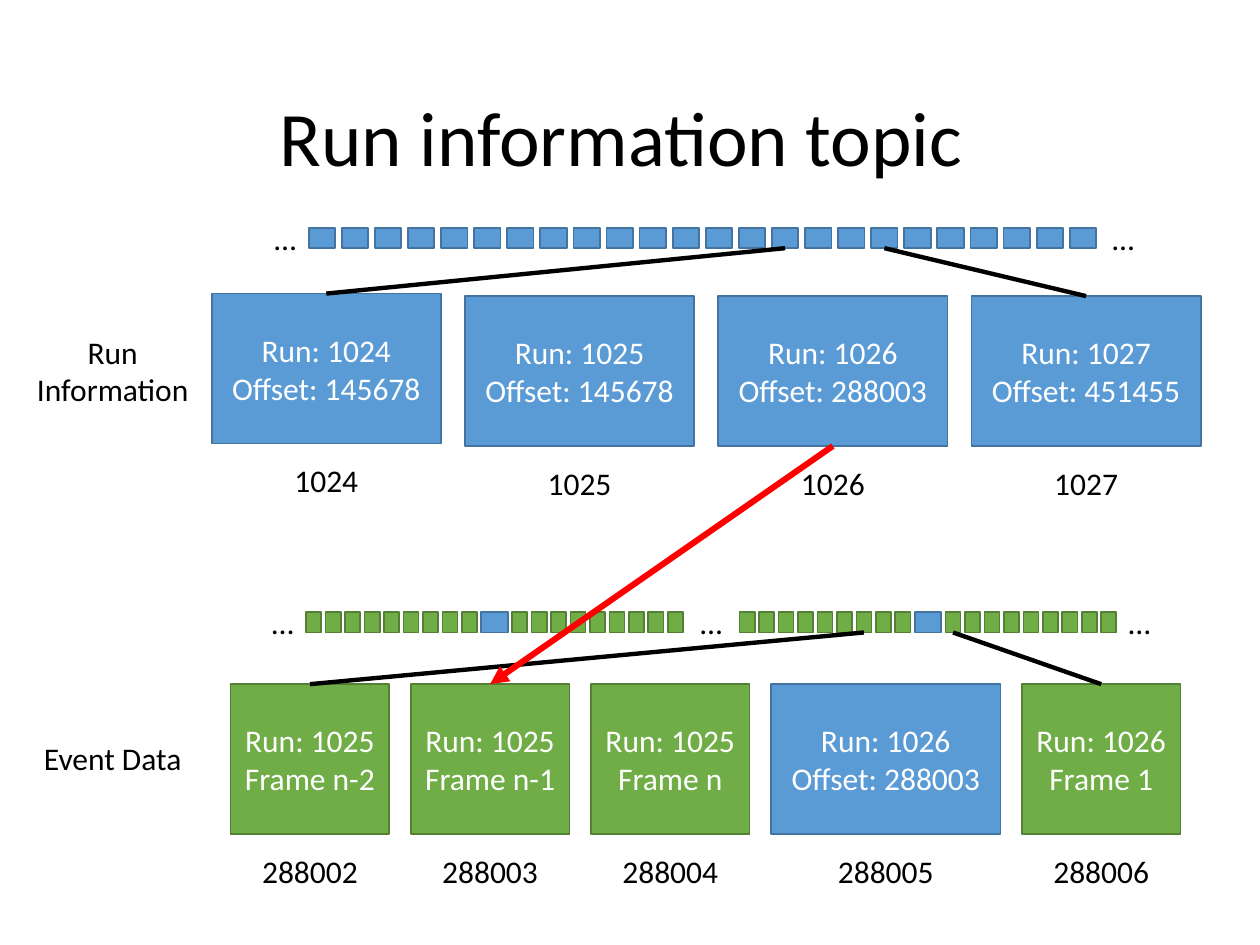
import pptx
import pptx.dml.color
import pptx.enum.shapes
import pptx.enum.text
import pptx.oxml
import pptx.oxml.ns
import pptx.util

COLORS = {"run": "5B9BD5", "run_line": "43739E", "event": "70AD47", "event_line": "538035",
          "text": "000000", "light": "FFFFFF", "arrow": "FF0000"}
COLUMNS, ROWS = 100, 75
CARD_WIDTHS = {"run": 18.2, "event": 12.6}
TICK_WIDTHS = {"run": 2.1, "event": 1.2}
CARD_HEIGHT, TICK_HEIGHT, LABEL_HEIGHT = 11.9, 1.6, 4
CAPTION_WIDTH, CAPTION_DROP = 10.1, 12.8
ELLIPSIS_WIDTH = 3.8
TOP, BOTTOM = 0, 2

presentation = pptx.Presentation()
presentation.slide_width = pptx.util.Inches(10)
presentation.slide_height = pptx.util.Inches(7.5)


def grid(left, top, width, height):
    """Turn a box in columns and rows into slide lengths."""
    column = presentation.slide_width / COLUMNS
    row = presentation.slide_height / ROWS
    return [round(value) for value in (left * column, top * row, width * column, height * row)]


def color(name):
    """Return the named colour."""
    return pptx.dml.color.RGBColor.from_string(COLORS[name])


def set_format(target, values):
    """Set every attribute in the dict of format values."""
    for name, value in values.items():
        setattr(target, name, value)


def write(text_frame, lines, name="text", size=18, **paragraph_format):
    """Write one paragraph for each line in a text frame."""
    for index, line in enumerate(lines):
        paragraph = text_frame.paragraphs[0] if index == 0 else text_frame.add_paragraph()
        set_format(paragraph, {"alignment": pptx.enum.text.PP_ALIGN.CENTER, **paragraph_format})
        run = paragraph.add_run()
        run.text = line
        set_format(run.font, {"name": "Calibri", "size": pptx.util.Pt(size)})
        run.font.color.rgb = color(name)


def add_label(slide, box, text, wrap=True, **paragraph_format):
    """Add a text box that grows with its text."""
    shape = slide.shapes.add_textbox(*grid(*box))
    set_format(shape.text_frame, {"word_wrap": wrap,
                                  "auto_size": pptx.enum.text.MSO_AUTO_SIZE.SHAPE_TO_FIT_TEXT})
    write(shape.text_frame, [text], **paragraph_format)


def add_ellipsis(slide, left, top):
    """Add an ellipsis that marks more messages."""
    add_label(slide, (left, top, ELLIPSIS_WIDTH, LABEL_HEIGHT), "…", False,
              alignment=pptx.enum.text.PP_ALIGN.LEFT)


def add_block(slide, box, kind, lines=()):
    """Add a rectangle in the colours of its message kind."""
    shape = slide.shapes.add_shape(pptx.enum.shapes.MSO_SHAPE.RECTANGLE, *grid(*box))
    shape.shadow.inherit = False
    shape.fill.solid()
    shape.fill.fore_color.rgb = color(kind)
    shape.line.color.rgb = color(kind + "_line")
    shape.line.width = pptx.util.Pt(1)
    write(shape.text_frame, lines, "light")
    return shape


def add_link(slide, start, end, name="text", width=2.5, arrow=False):
    """Join the bottom of one block to the top of another."""
    connector = slide.shapes.add_connector(pptx.enum.shapes.MSO_CONNECTOR.STRAIGHT, 0, 0, 0, 0)
    connector.begin_connect(start, BOTTOM)
    connector.end_connect(end, TOP)
    connector.line.color.rgb = color(name)
    connector.line.width = pptx.util.Pt(width)
    if arrow:
        line = connector.line._get_or_add_ln()
        line.append(pptx.oxml.parse_xml(f'<a:tailEnd {pptx.oxml.ns.nsdecls("a")} type="triangle"/>'))
    properties = connector._element.spPr
    properties.append(pptx.oxml.parse_xml(f'<a:effectLst {pptx.oxml.ns.nsdecls("a")}/>'))


def add_strip(slide, left, top, width, kinds):
    """Spread small blocks with equal gaps over a strip."""
    gap = (width - sum(TICK_WIDTHS[kind] for kind in kinds)) / (len(kinds) - 1)
    ticks = []
    for kind in kinds:
        ticks.append(add_block(slide, (left, top, TICK_WIDTHS[kind], TICK_HEIGHT), kind))
        left += TICK_WIDTHS[kind] + gap
    return ticks


def add_cards(slide, left, top, gap, cards):
    """Add a row of captioned message cards."""
    shapes = []
    for kind, lines, caption, shift in cards:
        width = CARD_WIDTHS[kind]
        card_top = top + shift
        shapes.append(add_block(slide, (left, card_top, width, CARD_HEIGHT), kind, lines))
        caption_left = left + (width - CAPTION_WIDTH) / 2
        add_label(slide, (caption_left, card_top + CAPTION_DROP, CAPTION_WIDTH, LABEL_HEIGHT), caption)
        left += width + gap
    return shapes


def add_title(slide, box, text):
    """Place and fill the title placeholder."""
    title = slide.shapes.title
    set_format(title, dict(zip(("left", "top", "width", "height"), grid(*box))))
    title.text_frame.vertical_anchor = pptx.enum.text.MSO_ANCHOR.MIDDLE
    write(title.text_frame, [text], size=44, line_spacing=0.9)


def add_run_topic(slide, left, top):
    """Draw the run information topic and return its cards."""
    add_label(slide, (left, top + 7.8, 14.3, 7.1), "Run Information")
    ticks = add_strip(slide, left + 22.7, top, 62.5, ["run"] * 24)
    for offset in (19, 85.5):
        add_ellipsis(slide, left + offset, top - 1.2)
    offsets = {1024: 145678, 1025: 145678, 1026: 288003, 1027: 451455}
    cards = add_cards(slide, left + 15, top + 5.4, 1.9, [
        ("run", (f"Run: {number}", f"Offset: {offset}"), str(number), -0.2 if number == 1024 else 0)
        for number, offset in offsets.items()])
    add_link(slide, ticks[14], cards[0])
    add_link(slide, ticks[17], cards[-1])
    return cards


def add_event_topic(slide, left, top):
    """Draw the event data topic and return its cards."""
    add_label(slide, (left, top + 9.6, 14.3, LABEL_HEIGHT), "Event Data")
    kinds = ["event"] * 9 + ["run"] + ["event"] * 9
    ticks = [add_strip(slide, left + offset, top, 29.9, kinds) for offset in (22.5, 56.9)][-1]
    for offset in (18.8, 52.8, 86.8):
        add_ellipsis(slide, left + offset, top - 1.2)
    messages = [("event", 1025, "Frame n-2"), ("event", 1025, "Frame n-1"), ("event", 1025, "Frame n"),
                ("run", 1026, "Offset: 288003"), ("event", 1026, "Frame 1")]
    cards = add_cards(slide, left + 16.5, top + 5.7, 1.7, [
        (kind, (f"Run: {number}", detail), str(caption), 0)
        for caption, (kind, number, detail) in enumerate(messages, 288002)])
    add_link(slide, ticks[6], cards[0])
    add_link(slide, ticks[10], cards[-1])
    return cards


def main():
    """Build the slide and save it."""
    slide = presentation.slides.add_slide(presentation.slide_layouts.get_by_name("Title Only"))
    add_title(slide, (6.9, 4, 86.2, 14.5), "Run information topic ")
    run_cards = add_run_topic(slide, 1.8, 18.1)
    event_cards = add_event_topic(slide, 1.8, 48.6)
    add_link(slide, run_cards[2], event_cards[1], "arrow", 3.5, arrow=True)
    presentation.save("out.pptx")


if __name__ == "__main__":
    main()
